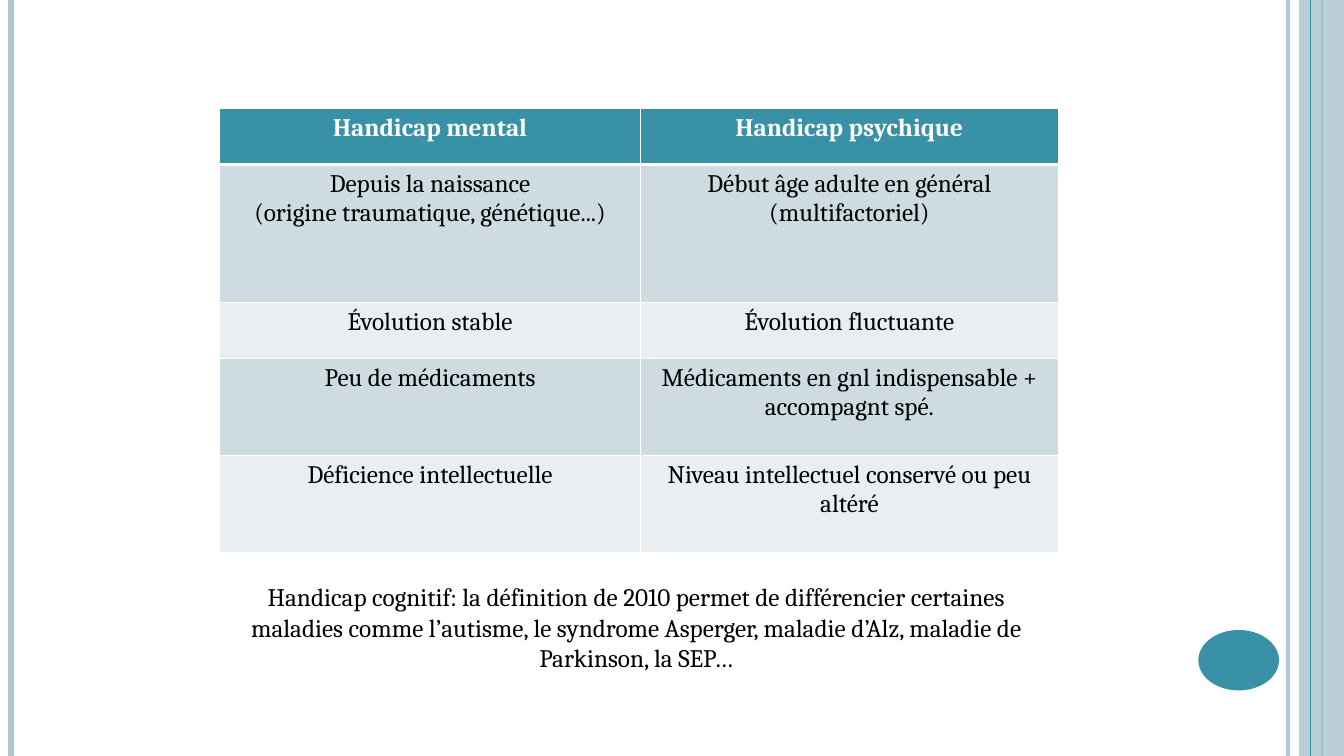
"""Build a slide that compares mental and psychic handicap in a table."""
from dataclasses import dataclass
from lxml.etree import SubElement as Sub
from pptx import Presentation
from pptx.dml.color import RGBColor as RGB
from pptx.enum.shapes import MSO_CONNECTOR as Link, MSO_SHAPE as Form
from pptx.enum.text import MSO_AUTO_SIZE as Fit, PP_ALIGN as Align
from pptx.oxml.ns import qn
from pptx.util import Pt


@dataclass(frozen=True)
class Theme:
    teal: str = "3891A7"
    mist: str = "AFC7D0"
    dark: str = "CEDCE1"
    light: str = "E8EEF1"
    white: str = "FFFFFF"
    black: str = "000000"
    font: str = "Cambria"
    size: int = 18


theme = Theme()
deck = Presentation()
deck.slide_width, deck.slide_height = Pt(960), Pt(540)
slide = deck.slides.add_slide(deck.slide_layouts[6])
shapes = slide.shapes


def rule(left, width, color):
    line = shapes.add_connector(Link.STRAIGHT, Pt(left), Pt(0), Pt(left), Pt(540))
    line.line.color.rgb = RGB.from_string(color)
    line.line.width = Pt(width)
    Sub(line._element.spPr, qn("a:effectLst"))
    return line


def write(frame, lines, color, bold=False):
    for index, text in enumerate(lines):
        para = frame.add_paragraph() if index else frame.paragraphs[0]
        para.alignment = Align.CENTER
        run = para.add_run()
        run.text = text
        run.font.name, run.font.size = theme.font, Pt(theme.size)
        run.font.bold = bold
        run.font.color.rgb = RGB.from_string(color)


edge = rule(920, 3, theme.mist)
rule(8, 4.5, theme.mist)
rule(944, 1.5, theme.teal)
panel = shapes.add_shape(Form.RECTANGLE, Pt(928), Pt(0), Pt(32), Pt(540))
rule(936, 0.75, theme.teal)
badge = shapes.add_shape(Form.OVAL, Pt(856), Pt(450), Pt(57.6), Pt(43.2))
for shape, color in ((panel, theme.mist), (badge, theme.teal)):
    shape.shadow.inherit = False
    shape.fill.solid()
    shape.fill.fore_color.rgb = RGB.from_string(color)
    shape.line.fill.background()
for shape, alpha in ((edge, 93), (panel, 87)):
    paint = next(shape._element.spPr.iter(qn("a:srgbClr")))
    Sub(paint, qn("a:alpha"), val=str(alpha * 1000))

rows = [
    (40, ["Handicap mental"], ["Handicap psychique"]),
    (98.5, ["Depuis la naissance", "(origine traumatique, génétique...)"],
     ["Début âge adulte en général", "(multifactoriel)"]),
    (40, ["Évolution stable"], ["Évolution fluctuante"]),
    (69.5, ["Peu de médicaments"],
     ["Médicaments en gnl indispensable + accompagnt spé."]),
    (69.5, ["Déficience intellectuelle"],
     ["Niveau intellectuel conservé ou peu altéré"]),
]
table = shapes.add_table(len(rows), 2, Pt(157), Pt(77.5), Pt(599), Pt(317.5)).table
for column, width in zip(table.columns, (300.5, 298.5)):
    column.width = Pt(width)
for row, (height, *cells) in enumerate(rows):
    table.rows[row].height = Pt(height)
    head = row == 0
    tint = theme.teal if head else theme.dark if row % 2 else theme.light
    for col, lines in enumerate(cells):
        cell = table.cell(row, col)
        props = cell._tc.get_or_add_tcPr()
        for side in "LRTB":
            thick = 3 if (row, side) in ((0, "B"), (1, "T")) else 1
            border = Sub(props, qn("a:ln" + side), w=str(Pt(thick)))
            Sub(Sub(border, qn("a:solidFill")), qn("a:srgbClr"), val=theme.white)
        cell.fill.solid()
        cell.fill.fore_color.rgb = RGB.from_string(tint)
        write(cell.text_frame, lines, theme.white if head else theme.black, head)

note = shapes.add_textbox(Pt(151), Pt(412), Pt(607), Pt(72.7)).text_frame
note.word_wrap = True
note.auto_size = Fit.SHAPE_TO_FIT_TEXT
write(note, ["Handicap cognitif: la définition de 2010 permet de différencier "
             "certaines maladies comme l’autisme, le syndrome Asperger, maladie "
             "d’Alz, maladie de Parkinson, la SEP…"], theme.black)

deck.save("out.pptx")
